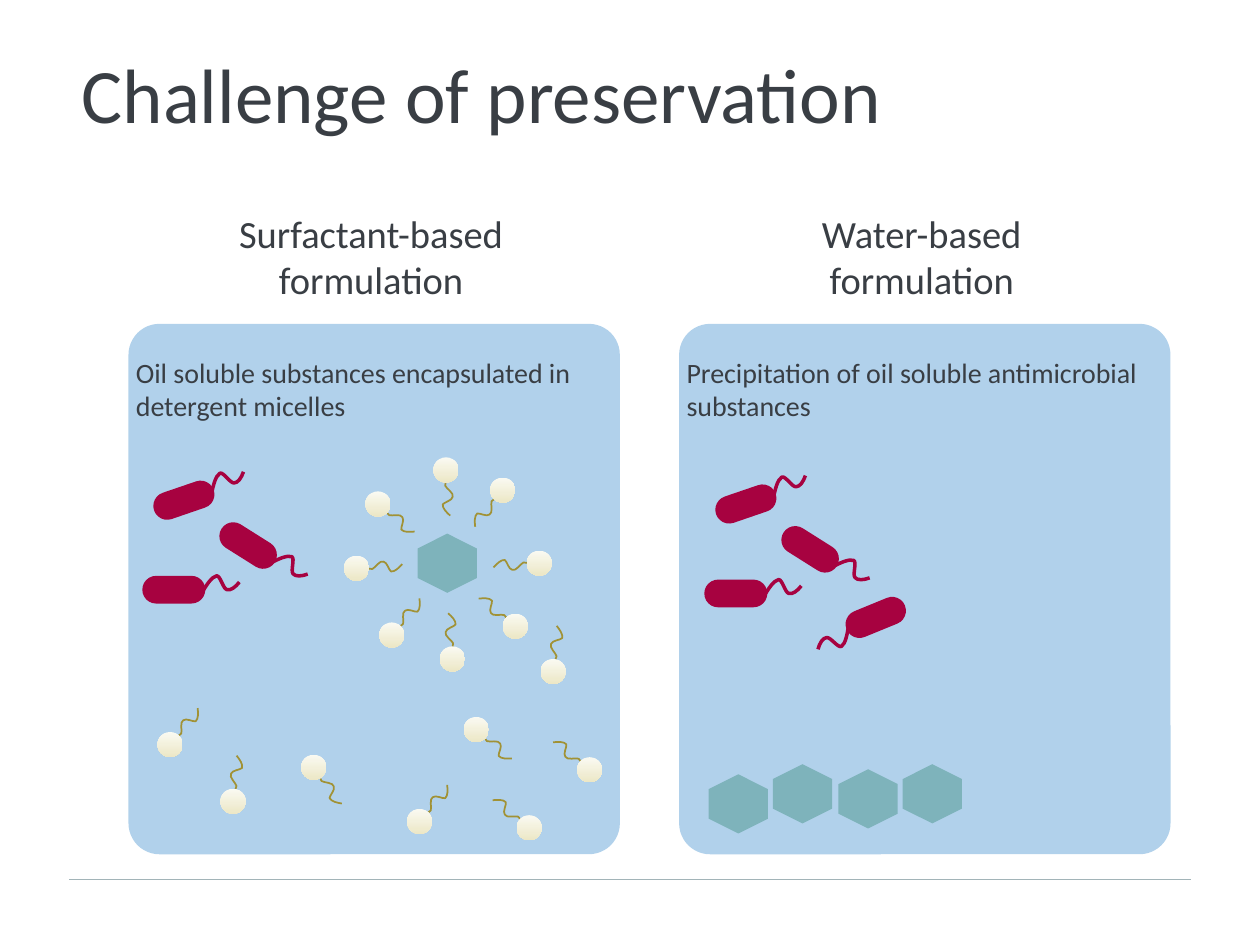
from dataclasses import dataclass
from math import cos, radians, sin

from lxml import etree
from pptx import Presentation
from pptx.dml.color import RGBColor
from pptx.enum import shapes as kinds, text as txt
from pptx.oxml.ns import qn
from pptx.util import Inches, Pt


@dataclass(frozen=True)
class Theme:
    font: str = "Calibri"
    ink: str = "393E44"
    rule: str = "A2B4B8"
    panel: str = "B1D1EB"
    germ: str = "A70240"
    oil: str = "7EB3BB"
    tail: str = "A19235"
    light: str = "FAFAF2"
    cream: str = "ECE7C6"
    title: int = 44
    head: int = 22
    body: int = 16


THEME = Theme()
KIND = kinds.MSO_SHAPE
PANEL = (3.9, 4.21)
CELL = (0.5, 0.22)
HEAD = 0.2
OIL = 0.47

# Start point, then three points for each Bezier curve
GERM_WAVE = [(0, .14), (.04, .07), (.08, .01), (.12, 0), (.15, 0), (.17, .1),
             (.2, .11), (.23, .12), (.27, .09), (.3, .05)]
SOAP_WAVE = [(0, .08), (.02, .08), (.05, .08), (.08, .08), (.1, .07), (.13, 0),
             (.16, .01), (.19, .01), (.21, .07), (.23, .08), (.26, .08),
             (.29, .04), (.31, .01)]

# Centre x, centre y and angle, measured from the panel corner
GERMS = [(.36, 2.11, 0), (.95, 1.76, 32.2), (.44, 1.4, 341.1)]
LONE_GERM = (1.56, 2.33, 157.7)
MICELLE = [(2.52, 1.16, 97.5), (2.57, 2.66, 277.5), (3.26, 1.9, 187.5),
           (1.81, 1.94, 7.5), (2.97, 1.32, 139.7), (2.09, 2.47, 319.7),
           (3.07, 2.4, 229.7), (1.98, 1.43, 49.7)]
LOOSE = [(3.18, 4, 229.7), (1.47, 3.52, 64.9), (3.66, 3.54, 229.7),
         (.33, 3.34, 319.7), (3.37, 2.76, 287.2), (2.31, 3.95, 319.7),
         (2.76, 3.22, 51.8), (.83, 3.79, 287.2)]
DROPS = [(.47, 3.81), (.98, 3.73), (1.5, 3.77), (2.01, 3.73)]


def rgb(code):
    return RGBColor.from_string(code)


def write(slide, words, box, size, align=txt.PP_ALIGN.LEFT):
    frame = slide.shapes.add_textbox(*map(Inches, box)).text_frame
    frame.word_wrap = True
    para = frame.paragraphs[0]
    para.text = words
    para.alignment = align
    para.font.name = THEME.font
    para.font.size = Pt(size)
    para.font.color.rgb = rgb(THEME.ink)


def solid(shapes, kind, box, color, angle=0):
    shape = shapes.add_shape(kind, *map(Inches, box))
    shape.shadow.inherit = False
    shape.fill.solid()
    shape.fill.fore_color.rgb = rgb(color)
    shape.line.fill.background()
    shape.rotation = angle
    return shape


def turn(x, y, dx, dy, angle):
    """Return the point at offset (dx, dy) from (x, y) after a turn."""
    c, s = cos(radians(angle)), sin(radians(angle))
    return x + dx * c - dy * s, y + dx * s + dy * c


def wave(shapes, points, mid, angle, color, width):
    """Draw a curved tail around its middle point."""
    left = mid[0] - max(x for x, _ in points) / 2
    top = mid[1] - max(y for _, y in points) / 2
    spots = [(Inches(left + x), Inches(top + y)) for x, y in points]
    draft = shapes.build_freeform(*spots[0])
    draft.add_line_segments(spots[1:], close=False)
    shape = draft.convert_to_shape()
    shape.shadow.inherit = False
    shape.fill.background()
    shape.line.color.rgb = rgb(color)
    shape.line.width = Pt(width)
    shape.rotation = angle
    curve = shape._element.find(".//" + qn("a:path"))
    steps = curve.findall(qn("a:lnTo"))
    for i in range(0, len(steps), 3):
        bend = etree.SubElement(curve, qn("a:cubicBezTo"))
        for step in steps[i:i + 3]:
            bend.append(step[0])
            curve.remove(step)


def germ(slide, x, y, angle):
    parts = slide.shapes.add_group_shape().shapes
    wide, high = CELL
    cell = solid(parts, KIND.ROUNDED_RECTANGLE,
                 (x - wide / 2, y - high / 2, wide, high), THEME.germ, angle)
    cell.adjustments[0] = 0.5
    wave(parts, GERM_WAVE, turn(x, y, .37, -.04, angle), angle, THEME.germ, 2)


def soap(slide, x, y, angle):
    """Draw a surfactant molecule: a round head and a thin tail."""
    parts = slide.shapes.add_group_shape().shapes
    wave(parts, SOAP_WAVE, turn(x, y, .2, -.05, angle), angle, THEME.tail, 1)
    ball = solid(parts, KIND.OVAL, (x - HEAD / 2, y - HEAD / 2, HEAD, HEAD),
                 THEME.cream)
    ball.fill.gradient()
    ball.fill.gradient_angle = 270
    for stop, color in zip(ball.fill.gradient_stops, (THEME.light, THEME.cream)):
        stop.color.rgb = rgb(color)


def drop(slide, x, y):
    solid(slide.shapes, KIND.HEXAGON,
          (x - OIL / 2, y - OIL / 2, OIL, OIL), THEME.oil, 270)


def panel(slide, left, top, head, note):
    write(slide, head, (left + .48, top - .95, 2.89, .84), THEME.head,
          txt.PP_ALIGN.CENTER)
    card = solid(slide.shapes, KIND.ROUNDED_RECTANGLE, (left, top, *PANEL),
                 THEME.panel)
    card.adjustments[0] = 0.063
    write(slide, note, (left - .04, top + .2, 3.92, .64), THEME.body)


def micelles(slide, left, top):
    panel(slide, left, top, "Surfactant-based formulation",
          "Oil soluble substances encapsulated in detergent micelles")
    for x, y, angle in MICELLE + LOOSE:
        soap(slide, left + x, top + y, angle)
    for x, y, angle in GERMS:
        germ(slide, left + x, top + y, angle)
    drop(slide, left + 2.53, top + 1.9)


def water(slide, left, top):
    panel(slide, left, top, "Water-based formulation",
          "Precipitation of oil soluble antimicrobial substances")
    for x, y, angle in GERMS:
        germ(slide, left + x + .09, top + y + .03, angle)
    for x, y in DROPS:
        drop(slide, left + x, top + y)
    x, y, angle = LONE_GERM
    germ(slide, left + x, top + y, angle)


def frame(slide, left, wide):
    """Place the title and the rule at the foot."""
    write(slide, "Challenge of preservation", (left, .32, wide, 1.14),
          THEME.title)
    rule = slide.shapes.add_connector(
        kinds.MSO_CONNECTOR.STRAIGHT,
        *map(Inches, (left, 6.98, left + wide, 6.98)))
    rule.line.color.rgb = rgb(THEME.rule)
    rule.line.width = Pt(0.75)
    etree.SubElement(rule._element.spPr, qn("a:effectLst"))


def main():
    deck = Presentation()
    deck.slide_width, deck.slide_height = Inches(10), Inches(7.5)
    slide = deck.slides.add_slide(deck.slide_layouts[6])
    frame(slide, 0.55, 8.9)
    micelles(slide, 1.02, 2.57)
    water(slide, 5.39, 2.57)
    deck.save("out.pptx")


if __name__ == "__main__":
    main()
